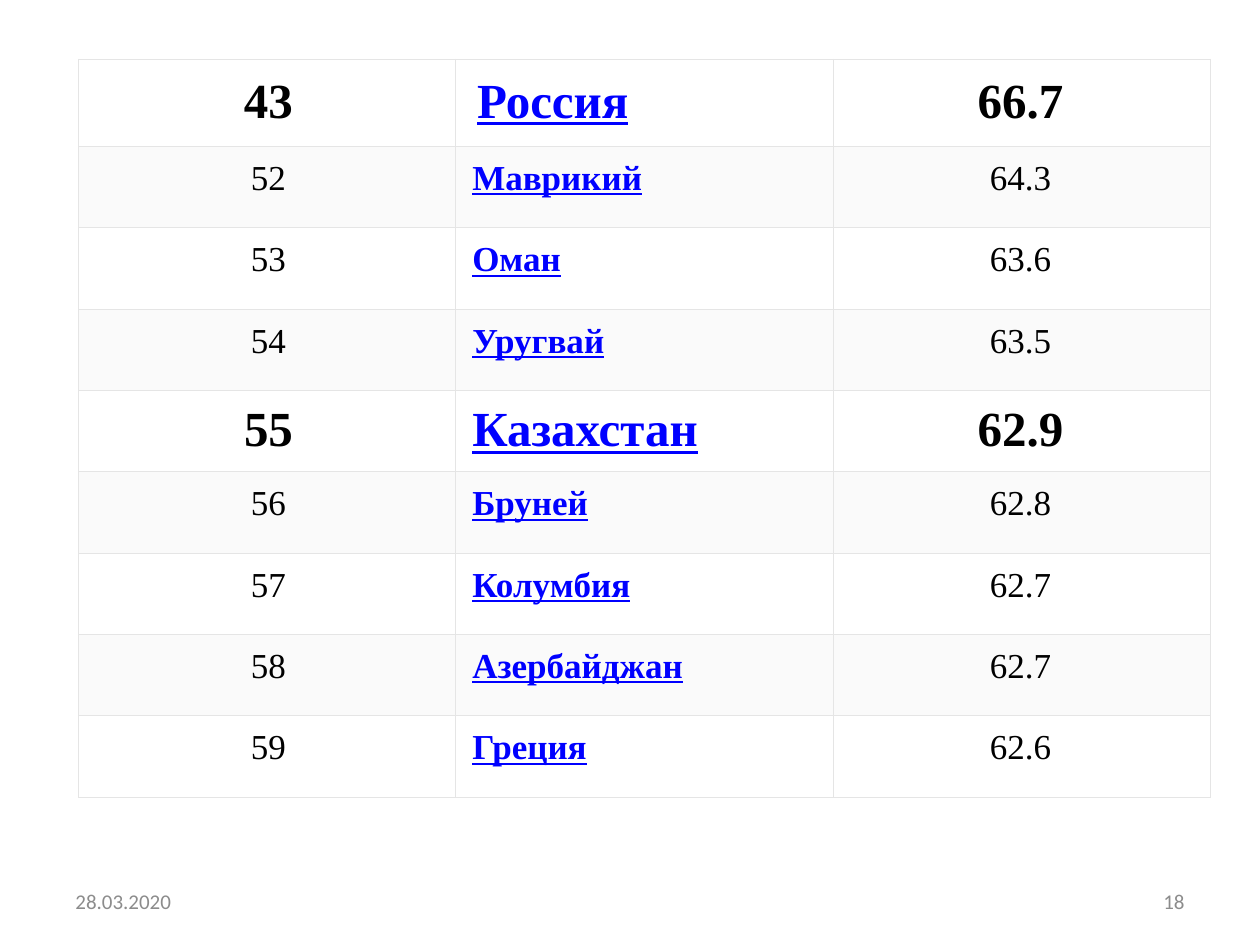
import pptx
import pptx.util
import pptx.dml.color
import pptx.enum.text
import pptx.oxml
import pptx.oxml.ns

Pt = pptx.util.Pt
ALIGN = pptx.enum.text.PP_ALIGN
MIDDLE = pptx.enum.text.MSO_ANCHOR.MIDDLE
COLORS = {"text": "000000", "link": "0000FF", "foot": "8C8C8C",
          "edge": "E5E5E5", "plain": "FFFFFF", "band": "FAFAFA"}
ROWS = [
    ("43", "Россия", "66.7"),
    ("52", "Маврикий", "64.3"),
    ("53", "Оман", "63.6"),
    ("54", "Уругвай", "63.5"),
    ("55", "Казахстан", "62.9"),
    ("56", "Бруней", "62.8"),
    ("57", "Колумбия", "62.7"),
    ("58", "Азербайджан", "62.7"),
    ("59", "Греция", "62.6"),
]
STRONG = {"43", "55"}


def rgb(name):
    return pptx.dml.color.RGBColor.from_string(COLORS[name])


def write(frame, text, size=20, font="Times New Roman", color="text",
          bold=False, line=False, align=ALIGN.LEFT):
    para = frame.paragraphs[0]
    para.alignment = align
    run = para.add_run()
    run.text = text
    run.font.size = Pt(size)
    run.font.name = font
    run.font.bold = bold
    run.font.underline = line
    run.font.color.rgb = rgb(color)


class Deck:
    def __init__(self, wide, high):
        self.show = pptx.Presentation()
        self.show.slide_width, self.show.slide_height = Pt(wide), Pt(high)
        self.slide = self.show.slides.add_slide(self.show.slide_layouts[6])

    def label(self, text, left, top, wide, high, **style):
        box = self.slide.shapes.add_textbox(Pt(left), Pt(top), Pt(wide), Pt(high))
        box.text_frame.word_wrap = True
        box.text_frame.vertical_anchor = MIDDLE
        write(box.text_frame, text, size=12, font="Calibri", color="foot", **style)

    def border(self, cell):
        props = cell._tc.get_or_add_tcPr()
        space = pptx.oxml.ns.nsdecls("a")
        for spot, side in enumerate("LRTB"):
            props.insert(spot, pptx.oxml.parse_xml(
                f'<a:ln{side} {space} w="{Pt(0.75)}"><a:solidFill>'
                f'<a:srgbClr val="{COLORS["edge"]}"/></a:solidFill></a:ln{side}>'))

    def table(self, rows, left, top, wide, high):
        count = len(rows[0])
        grid = self.slide.shapes.add_table(
            len(rows), count, Pt(left), Pt(top), Pt(wide), Pt(high)).table
        grid.first_row = grid.horz_banding = False
        for i, row in enumerate(rows):
            # The first row has slightly wider margins
            pad, above, below = (12.2, 8.6, 10.1) if i == 0 else (9.4, 7.2, 7.9)
            strong = row[0] in STRONG
            for j, text in enumerate(row):
                cell = grid.cell(i, j)
                cell.margin_left = Pt(pad + 1.4 * (j == 0))
                cell.margin_right = Pt(pad + 1.4 * (j == count - 1))
                cell.margin_top, cell.margin_bottom = Pt(above), Pt(below)
                cell.fill.solid()
                cell.fill.fore_color.rgb = rgb("band" if i % 2 else "plain")
                self.border(cell)
                name = j == 1
                write(cell.text_frame, text, size=28 if strong else 20,
                      color="link" if name else "text",
                      bold=strong or name, line=name,
                      align=ALIGN.LEFT if name else ALIGN.CENTER)


def main():
    deck = Deck(720, 540)
    # Country ranking
    deck.table(ROWS, 44.9, 34, 646.8, 46.5 * len(ROWS))
    # Date and slide number
    deck.label("28.03.2020", 36, 500.5, 168, 28.75)
    deck.label("18", 516, 500.5, 168, 28.75, align=ALIGN.RIGHT)
    deck.show.save("out.pptx")


if __name__ == "__main__":
    main()
